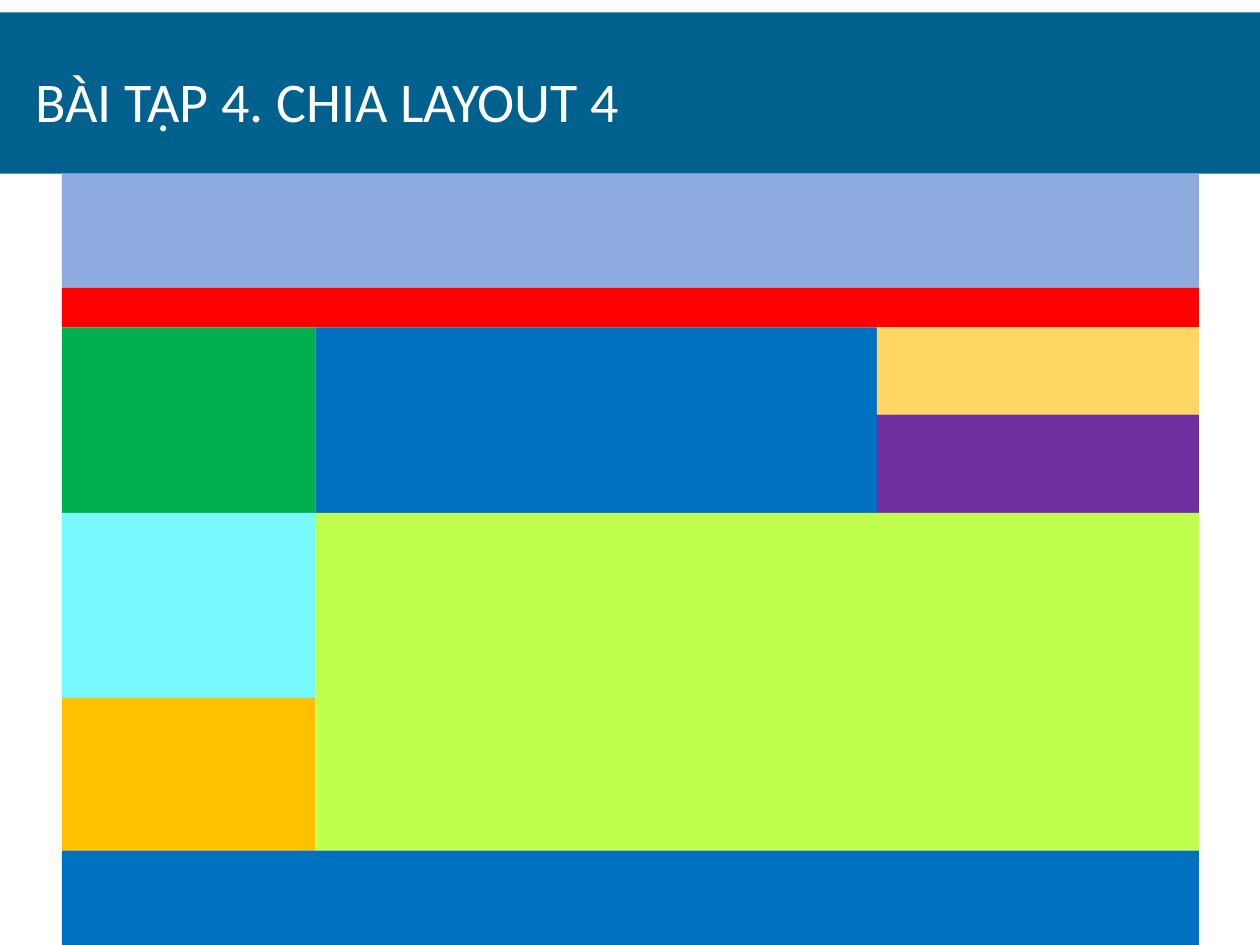
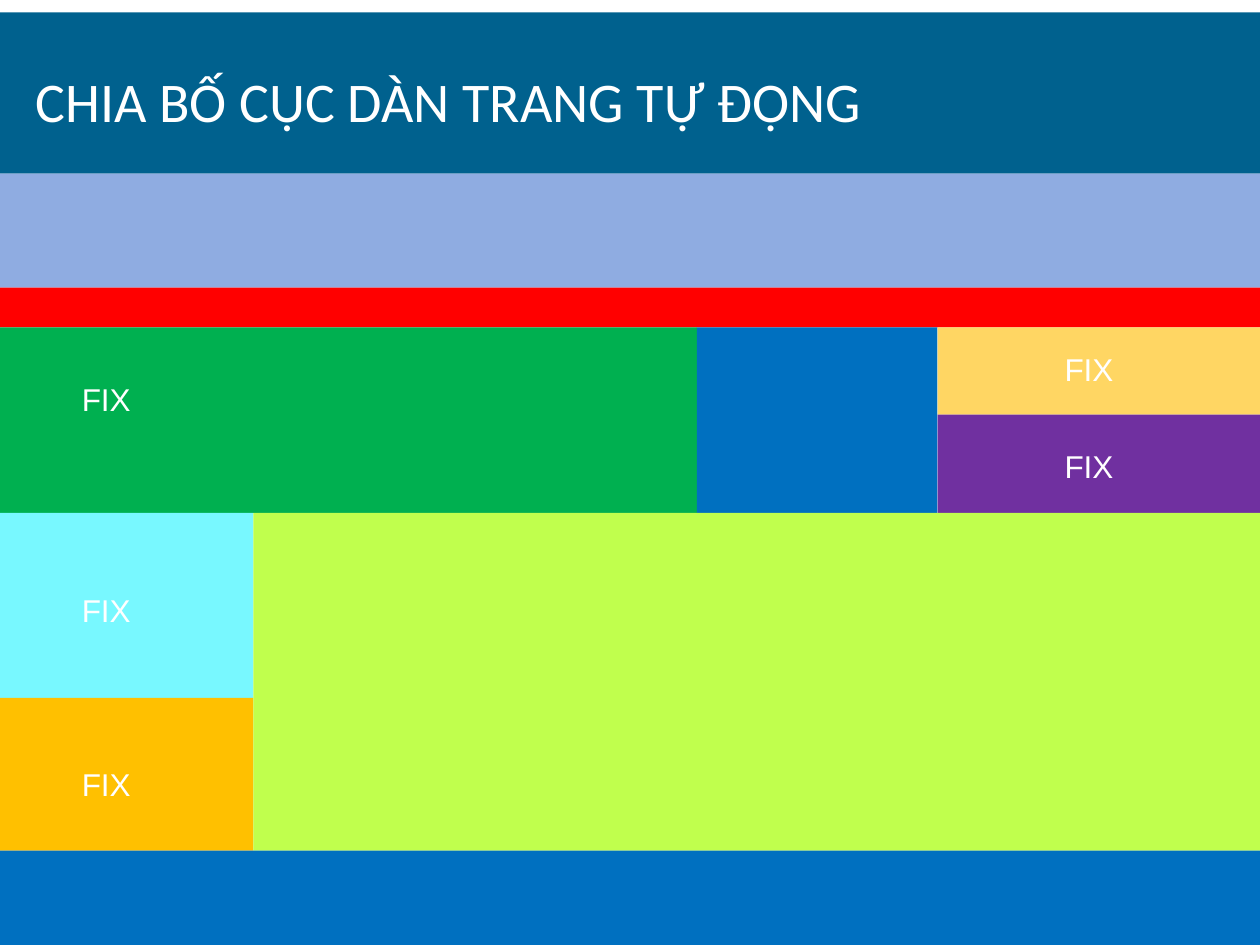
from typing import NamedTuple

from pptx import Presentation
from pptx.dml.color import RGBColor
from pptx.enum.shapes import MSO_SHAPE
from pptx.enum.text import MSO_ANCHOR, MSO_AUTO_SIZE, PP_ALIGN
from pptx.util import Cm, Pt

RECT = MSO_SHAPE.RECTANGLE
LEFT = PP_ALIGN.LEFT
BOTTOM = MSO_ANCHOR.BOTTOM
FIXED = MSO_AUTO_SIZE.NONE
GROW = MSO_AUTO_SIZE.SHAPE_TO_FIT_TEXT

WIDTH, HEIGHT = 25.4, 19.05
TITLE_ONLY = 5
WHITE = "FFFFFF"
BAND = "00618E"
BLUE = "0070C0"
ROWS = (3.5, 5.8, 6.6, 8.36, 10.34, 14.07, 17.15, HEIGHT)


class Block(NamedTuple):
    color: str
    left: int
    right: int
    top: int
    bottom: int


class Label(NamedTuple):
    text: str
    left: float
    top: float


class Page(NamedTuple):
    title: str
    cols: tuple[float, ...]
    labels: tuple[Label, ...] = ()


BLOCKS = (
    Block("8FACE1", 0, 4, 0, 1),
    Block("FF0000", 0, 4, 1, 2),
    Block("00B050", 0, 2, 2, 4),
    Block(BLUE, 2, 3, 2, 4),
    Block("FFD663", 3, 4, 2, 3),
    Block("7030A0", 3, 4, 3, 4),
    Block("78F8FF", 0, 1, 4, 5),
    Block("FFC000", 0, 1, 5, 6),
    Block("C0FF4D", 1, 4, 4, 6),
    Block(BLUE, 0, 4, 6, 7),
)

FIX_SPOTS = ((1.4, 7.54), (1.4, 11.79), (1.4, 15.29), (21.21, 6.93), (21.21, 8.89))

PAGES = (
    Page("BÀI TẬP 4. CHIA LAYOUT 4", (1.25, 6.36, 6.36, 17.68, 24.17)),
    Page(
        "CHIA BỐ CỤC DÀN TRANG TỰ ĐỘNG",
        (0, 5.11, 14.05, 18.9, WIDTH),
        tuple(Label("FIX", left, top) for left, top in FIX_SPOTS),
    ),
)


def rgb(code: str) -> RGBColor:
    return RGBColor.from_string(code)


def add_rect(slide, color: str, left: float, top: float, right: float, bottom: float):
    rect = slide.shapes.add_shape(
        RECT, Cm(left), Cm(top), Cm(right - left), Cm(bottom - top)
    )
    rect.shadow.inherit = False
    rect.fill.solid()
    rect.fill.fore_color.rgb = rgb(color)
    rect.line.fill.background()
    return rect


def add_text(frame, text: str, font: str, size: int) -> None:
    para = frame.paragraphs[0]
    para.alignment = LEFT
    run = para.add_run()
    run.text = text
    run.font.name = font
    run.font.size = Pt(size)
    run.font.color.rgb = rgb(WHITE)


def add_title(slide, text: str) -> None:
    title = slide.shapes.title
    title.left, title.top = Cm(0.46), Cm(1.12)
    title.width, title.height = Cm(20.17), Cm(1.57)
    band = add_rect(slide, BAND, 0, 0.25, WIDTH, ROWS[0])
    title.element.addprevious(band.element)
    frame = title.text_frame
    frame.auto_size = FIXED
    frame.vertical_anchor = BOTTOM
    frame.margin_top = frame.margin_bottom = 0
    add_text(frame, text, "Calibri", 32)


def add_label(slide, label: Label) -> None:
    box = slide.shapes.add_textbox(Cm(label.left), Cm(label.top), Cm(1.88), Cm(1.02))
    box.text_frame.word_wrap = True
    box.text_frame.auto_size = GROW
    add_text(box.text_frame, label.text, "Arial", 18)


def add_page(deck, page: Page) -> None:
    slide = deck.slides.add_slide(deck.slide_layouts[TITLE_ONLY])
    add_title(slide, page.title)
    for block in BLOCKS:
        add_rect(
            slide,
            block.color,
            page.cols[block.left],
            ROWS[block.top],
            page.cols[block.right],
            ROWS[block.bottom],
        )
    for label in page.labels:
        add_label(slide, label)


def main() -> None:
    """Build the layout slides and save the deck."""
    deck = Presentation()
    deck.slide_width, deck.slide_height = Cm(WIDTH), Cm(HEIGHT)
    for page in PAGES:
        add_page(deck, page)
    deck.save("out.pptx")


if __name__ == "__main__":
    main()
